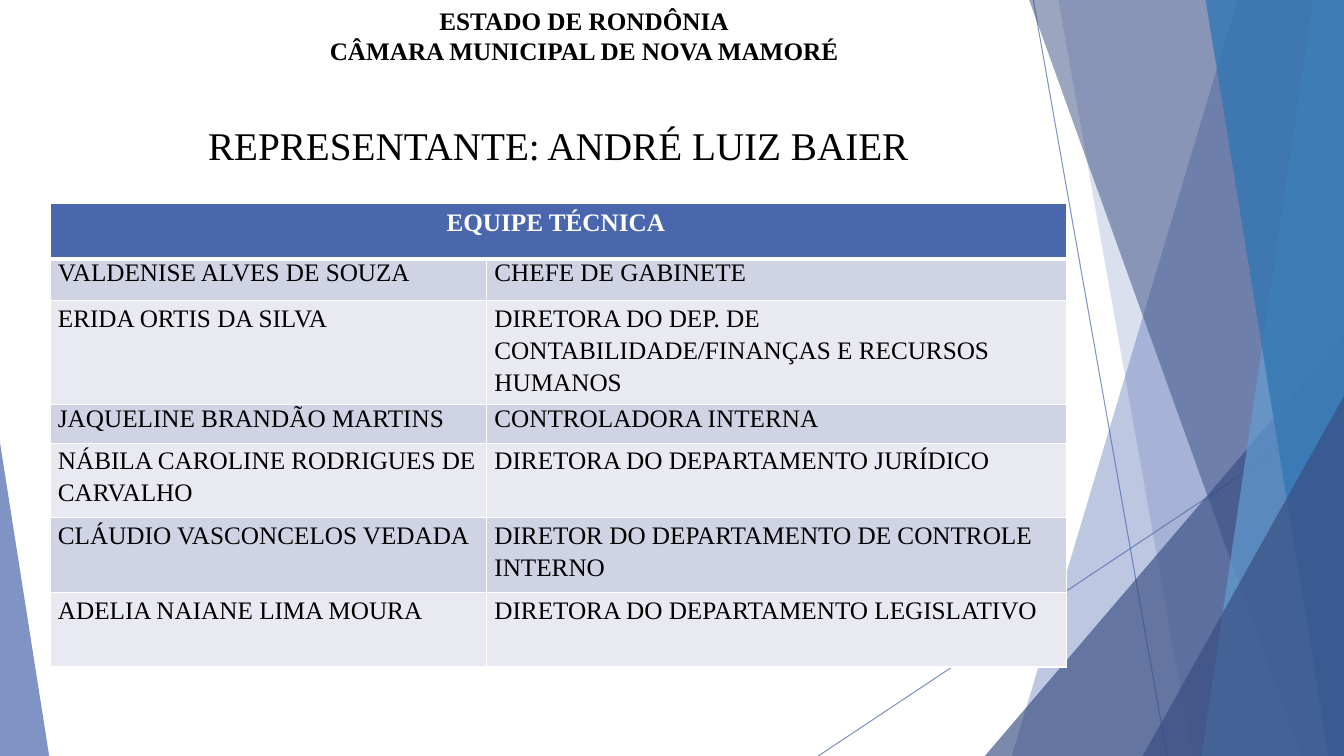
from lxml import etree
from pptx import Presentation
from pptx.dml.color import RGBColor
from pptx.enum import shapes, text
from pptx.oxml.ns import qn
from pptx.util import Cm, Pt

WHITE = RGBColor(0xFF, 0xFF, 0xFF)
BLACK = RGBColor(0, 0, 0)
BLUE = RGBColor(0x4A, 0x66, 0xAC)
NAVY = RGBColor(0x38, 0x4C, 0x81)
SKY = RGBColor(0x62, 0x9D, 0xD1)
OCEAN = RGBColor(0x34, 0x77, 0xB2)
BAND_DARK = RGBColor(0xD0, 0xD3, 0xE3)
BAND_LIGHT = RGBColor(0xE9, 0xEA, 0xF1)

FONT = "Times New Roman"
WIDTH, HEIGHT = 33.87, 19.05  # slide size in cm
TOP = -0.02  # facets start just above the slide

# name, role, row height in cm, line spacing
TEAM = [
    ("VALDENISE ALVES DE SOUZA", "CHEFE DE GABINETE", 1.04, None),
    ("ERIDA ORTIS DA SILVA",
     "DIRETORA DO DEP. DE CONTABILIDADE/FINANÇAS E RECURSOS HUMANOS", 1.04, 1.15),
    ("JAQUELINE BRANDÃO MARTINS", "CONTROLADORA INTERNA", 0.97, None),
    ("NÁBILA CAROLINE RODRIGUES DE CARVALHO",
     "DIRETORA DO DEPARTAMENTO JURÍDICO", 1.88, 1.15),
    ("CLÁUDIO VASCONCELOS VEDADA",
     "DIRETOR DO DEPARTAMENTO DE CONTROLE INTERNO", 1.88, 1.15),
    ("ADELIA NAIANE LIMA MOURA", "DIRETORA DO DEPARTAMENTO LEGISLATIVO", 1.88, 1.15),
]


def set_alpha(fill_parent, percent):
    color = fill_parent.find(".//" + qn("a:srgbClr"))
    etree.SubElement(color, qn("a:alpha"), val=str(percent * 1000))


def paint(shape, color, opacity):
    shape.shadow.inherit = False
    shape.fill.solid()
    shape.fill.fore_color.rgb = color
    set_alpha(shape.fill._xPr.find(qn("a:solidFill")), opacity)
    shape.line.fill.background()


def add_facet(page, top_x, bottom_x, color, opacity):
    """Four-sided facet reaching to the right edge of the slide."""
    builder = page.shapes.build_freeform(Cm(top_x), Cm(TOP))
    corners = [(WIDTH, TOP), (WIDTH, HEIGHT), (bottom_x, HEIGHT)]
    builder.add_line_segments([(Cm(x), Cm(y)) for x, y in corners], close=True)
    paint(builder.convert_to_shape(), color, opacity)


def add_triangle(page, left, right, top, apex, color, opacity):
    """Triangle standing on the bottom edge of the slide."""
    triangle = page.shapes.add_shape(
        shapes.MSO_SHAPE.ISOSCELES_TRIANGLE,
        Cm(left), Cm(top), Cm(right - left), Cm(HEIGHT - top))
    triangle.adjustments[0] = apex
    paint(triangle, color, opacity)


def add_thin_line(page, x1, y1, x2, y2):
    line = page.shapes.add_connector(
        shapes.MSO_CONNECTOR.STRAIGHT, Cm(x1), Cm(y1), Cm(x2), Cm(y2))
    line.line.width = Pt(0.75)
    line.line.color.rgb = BLUE
    properties = line._element.spPr
    set_alpha(properties, 70)
    etree.SubElement(properties, qn("a:effectLst"))


def write(para, lines, size, color=BLACK, bold=False, centred=False):
    if centred:
        para.alignment = text.PP_ALIGN.CENTER
    for number, line in enumerate(lines):
        if number:
            para.add_line_break()
        span = para.add_run()
        span.text = line
        span.font.name = FONT
        span.font.size = Pt(size)
        span.font.bold = bold
        span.font.color.rgb = color


def add_heading(page, left, top, width, height, lines, size, bold=False):
    box = page.shapes.add_textbox(Cm(left), Cm(top), Cm(width), Cm(height))
    box.text_frame.word_wrap = True
    write(box.text_frame.paragraphs[0], lines, size, bold=bold, centred=True)


def style_cell(cell, color, top=1, bottom=1):
    """White borders, widths in points, around a plain fill."""
    properties = cell._tc.get_or_add_tcPr()
    for side, width in (("L", 1), ("R", 1), ("T", top), ("B", bottom)):
        border = etree.SubElement(properties, qn("a:ln" + side), w=str(Pt(width)))
        fill = etree.SubElement(border, qn("a:solidFill"))
        etree.SubElement(fill, qn("a:srgbClr"), val=str(WHITE))
    cell.fill.solid()
    cell.fill.fore_color.rgb = color
    cell.margin_left = cell.margin_right = Cm(0.19)


def add_team_table(page):
    heights = [1.4] + [member[2] for member in TEAM]
    frame = page.shapes.add_table(
        len(heights), 2, Cm(1.27), Cm(5.13), Cm(25.6), Cm(sum(heights)))
    table = frame.table
    for column, width in zip(table.columns, (11, 14.6)):
        column.width = Cm(width)
    for row, height in zip(table.rows, heights):
        row.height = Cm(height)

    # Header across both columns
    for column in range(2):
        style_cell(table.cell(0, column), BLUE, bottom=3)
    header = table.cell(0, 0)
    header.merge(table.cell(0, 1))
    write(header.text_frame.paragraphs[0], ["EQUIPE TÉCNICA "], 18, WHITE, True, True)

    # One banded row per member
    for row, (name, role, _, spacing) in enumerate(TEAM, start=1):
        for column, words in enumerate((name, role)):
            cell = table.cell(row, column)
            style_cell(cell, BAND_DARK if row % 2 else BAND_LIGHT,
                       top=3 if row == 1 else 1)
            cell.margin_top = cell.margin_bottom = 0
            para = cell.text_frame.paragraphs[0]
            if spacing:
                para.line_spacing = spacing
            write(para, [words], 18)


def add_backdrop(page):
    add_thin_line(page, 26.04, 0, 29.41, HEIGHT)
    add_thin_line(page, WIDTH, 10.24, 20.62, HEIGHT)
    add_facet(page, 31.19, 25.5, BLUE, 36)
    add_facet(page, 26.67, 30.05, BLUE, 20)
    add_triangle(page, 24.82, WIDTH, 8.46, 1, NAVY, 66)
    add_facet(page, 25.93, 32.79, NAVY, 50)
    add_facet(page, 33.1, 30.28, SKY, 70)
    add_facet(page, 30.38, 33.48, OCEAN, 80)
    add_triangle(page, 28.8, WIDTH, 9.98, 1, NAVY, 66)
    add_triangle(page, 0, 1.24, 11.15, 0, BLUE, 70)


def main():
    deck = Presentation()
    deck.slide_width, deck.slide_height = Cm(WIDTH), Cm(HEIGHT)
    page = deck.slides.add_slide(deck.slide_layouts[6])

    add_backdrop(page)
    add_heading(page, 2.13, 2.92, 23.88, 3.66, ["REPRESENTANTE: ANDRÉ LUIZ BAIER"], 28)
    add_team_table(page)
    add_heading(page, 6.25, 0, 16.94, 1.8,
                ["ESTADO DE RONDÔNIA", "CÂMARA MUNICIPAL DE NOVA MAMORÉ"], 18, bold=True)

    deck.save("out.pptx")


if __name__ == "__main__":
    main()
